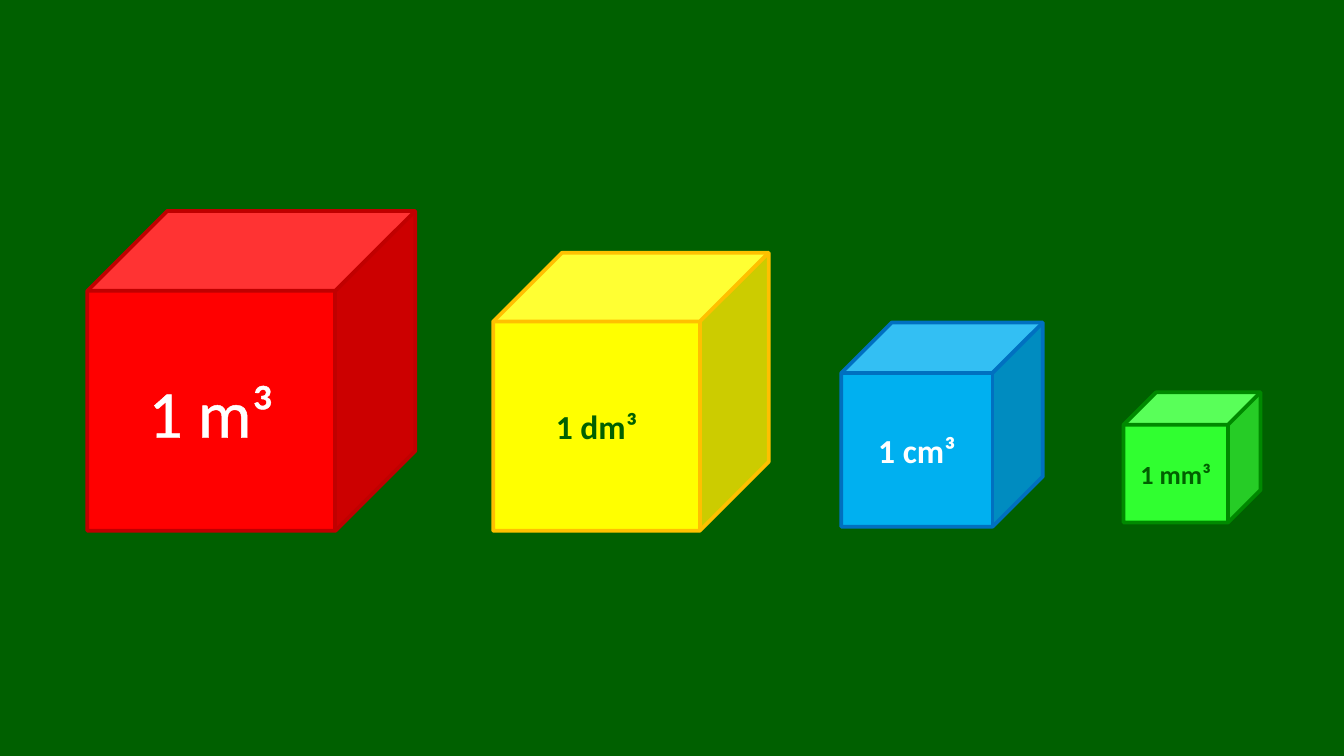
from lxml import etree
from pptx import Presentation
from pptx.dml.color import RGBColor
from pptx.enum import shapes, text
from pptx.oxml import ns
from pptx.util import Pt

BOARD_GREEN = RGBColor(0x00, 0x60, 0x00)
WHITE = RGBColor(0xFF, 0xFF, 0xFF)
RED = RGBColor(0xFF, 0x00, 0x00)
DARK_RED = RGBColor(0xC0, 0x00, 0x00)
YELLOW = RGBColor(0xFF, 0xFF, 0x00)
AMBER = RGBColor(0xFF, 0xC0, 0x00)
SKY = RGBColor(0x00, 0xB0, 0xF0)
BLUE = RGBColor(0x00, 0x70, 0xC0)
LIME = RGBColor(0x30, 0xFF, 0x30)
GREEN = RGBColor(0x00, 0x89, 0x00)


class VolumeSlide:
    font = "Calibri"
    edge_width = Pt(2)
    outline_width = Pt(0.75)

    def __init__(self, deck):
        self.slide = deck.slides.add_slide(deck.slide_layouts[6])
        backdrop = self.slide.background.fill
        backdrop.solid()
        backdrop.fore_color.rgb = BOARD_GREEN

    def cube(self, box, face, edge):
        cube = self.slide.shapes.add_shape(
            shapes.MSO_SHAPE.CUBE, *(Pt(length) for length in box))
        cube.shadow.inherit = False
        cube.fill.solid()
        cube.fill.fore_color.rgb = face
        cube.line.color.rgb = edge
        cube.line.width = self.edge_width
        return cube

    def label(self, cube, unit, size, color, bold):
        frame = cube.text_frame
        frame.word_wrap = True
        frame.margin_left = frame.margin_right = Pt(0)
        frame.vertical_anchor = text.MSO_ANCHOR.MIDDLE
        paragraph = frame.paragraphs[0]
        paragraph.alignment = text.PP_ALIGN.CENTER
        run = paragraph.add_run()
        run.text = f"1 {unit}³"
        run.font.name = self.font
        run.font.size = Pt(size)
        run.font.bold = bold
        run.font.color.rgb = color
        return run

    def outline(self, run, color):
        line = etree.Element(ns.qn("a:ln"), w=str(self.outline_width))
        fill = etree.SubElement(line, ns.qn("a:solidFill"))
        etree.SubElement(fill, ns.qn("a:srgbClr"), val=str(color))
        run.font._element.insert(0, line)


def main():
    deck = Presentation()
    deck.slide_width, deck.slide_height = Pt(720), Pt(405)
    volumes = VolumeSlide(deck)

    cubes = [
        ("m", (46.8, 113, 175.7, 171.4), RED, DARK_RED, 36, WHITE),
        ("dm", (264.2, 135.4, 147.6, 149), YELLOW, AMBER, 18, BOARD_GREEN),
        ("cm", (450.7, 172.8, 108, 109.4), SKY, BLUE, 18, WHITE),
        ("mm", (601.9, 210.2, 73.4, 69.8), LIME, GREEN, 14, BOARD_GREEN),
    ]
    for unit, box, face, edge, size, color in cubes:
        cube = volumes.cube(box, face, edge)
        largest = unit == "m"
        volume = volumes.label(cube, unit, size, color, bold=not largest)
        if largest:
            volumes.outline(volume, WHITE)

    deck.save("out.pptx")


if __name__ == "__main__":
    main()
